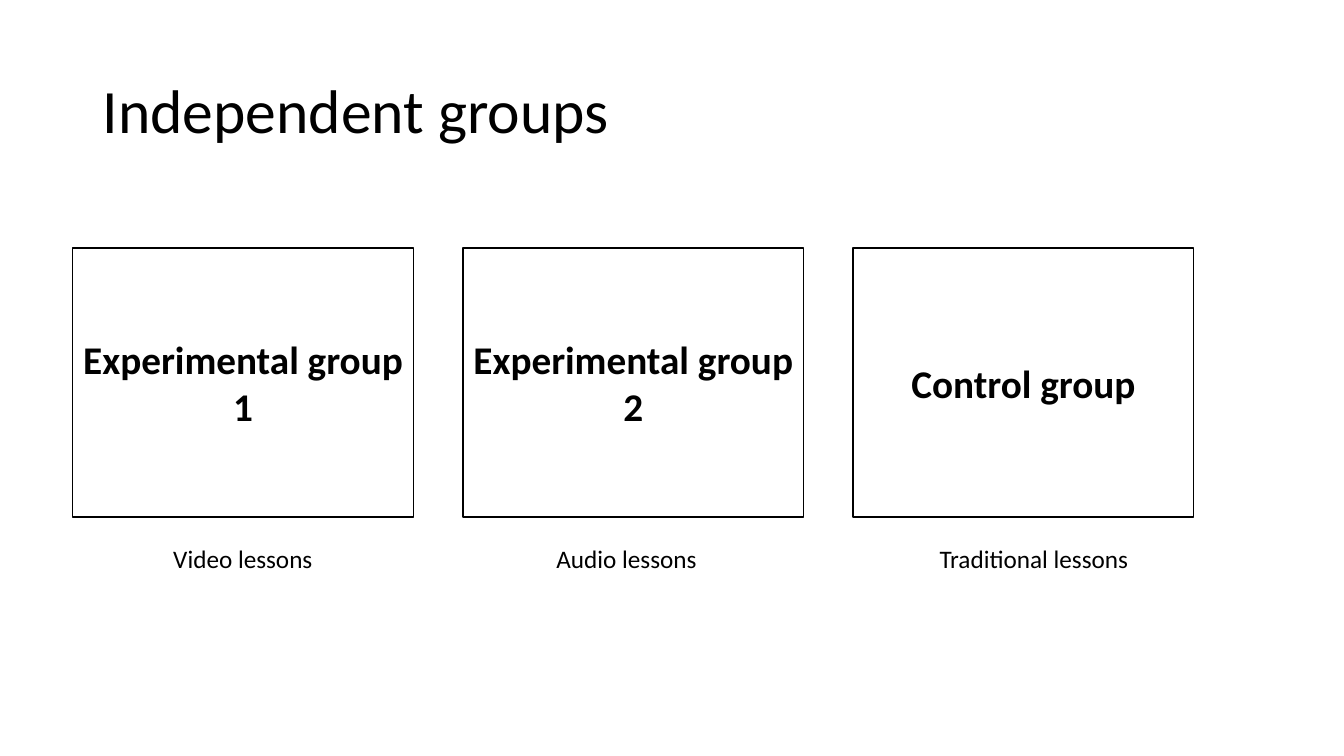
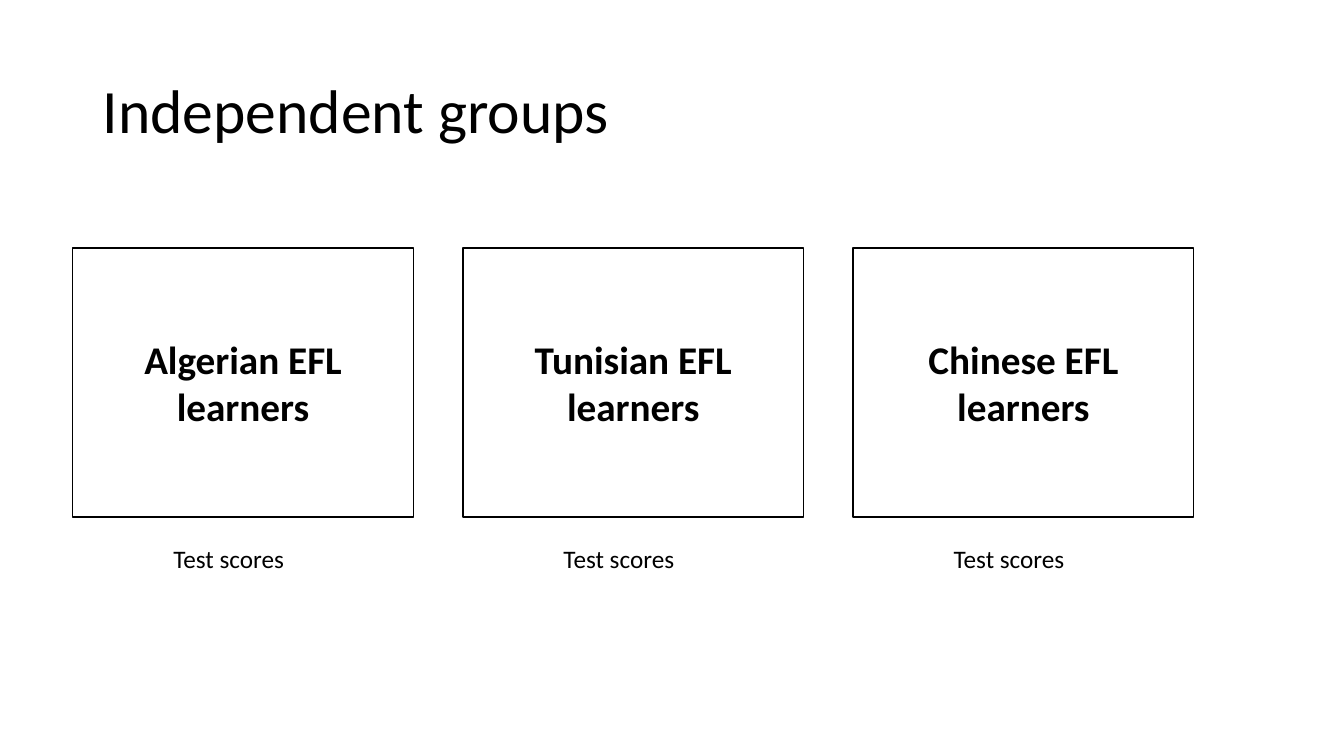
from dataclasses import dataclass

from pptx import Presentation
from pptx.dml.color import RGBColor
from pptx.enum.shapes import MSO_SHAPE
from pptx.enum.text import MSO_ANCHOR, MSO_AUTO_SIZE, PP_ALIGN
from pptx.util import Inches, Pt


@dataclass(frozen=True)
class Theme:
    font: str = "Calibri"
    ink: RGBColor = RGBColor(0, 0, 0)
    paper: RGBColor = RGBColor(255, 255, 255)
    title: Pt = Pt(44)
    group: Pt = Pt(28)
    caption: Pt = Pt(18)
    line: Pt = Pt(1)


THEME = Theme()
TITLE = "Independent groups"
GROUP_LEFT, GROUP_PITCH = 0.72, 3.87
CAPTION_LEFT = 1.62

SLIDES = [
    {
        "groups": ["Experimental group 1", "Experimental group 2", "Control group"],
        "captions": [("Video lessons", 1.74), ("Audio lessons", 1.74), ("Traditional lessons", 2.24)],
        "caption_pitch": 3.8,
    },
    {
        "groups": ["Algerian EFL learners", "Tunisian EFL learners", "Chinese EFL learners"],
        "captions": [("Test scores", 1.58)] * 3,
        "caption_pitch": GROUP_PITCH,
    },
]


def write(sp, text, size, bold=False, frame=None, para=None):
    tf = sp.text_frame
    p = tf.paragraphs[0]
    r = p.add_run()
    r.text = text
    formats = [
        (tf, {"word_wrap": True, **(frame or {})}),
        (p, para or {}),
        (r.font, {"name": THEME.font, "size": size, "bold": bold}),
    ]
    for target, values in formats:
        for name, value in values.items():
            setattr(target, name, value)
    r.font.color.rgb = THEME.ink


prs = Presentation()
prs.slide_width = Inches(13.33)
prs.slide_height = Inches(7.5)

for content in SLIDES:
    s = prs.slides.add_slide(prs.slide_layouts[6])
    s.background.fill.solid()
    s.background.fill.fore_color.rgb = THEME.paper

    sp = s.shapes.add_textbox(Inches(0.92), Inches(0.4), Inches(11.5), Inches(1.45))
    write(sp, TITLE, THEME.title,
          frame={"vertical_anchor": MSO_ANCHOR.MIDDLE}, para={"line_spacing": 0.9})

    for i, group in enumerate(content["groups"]):
        sp = s.shapes.add_shape(MSO_SHAPE.RECTANGLE, Inches(GROUP_LEFT + i * GROUP_PITCH),
                                Inches(2.46), Inches(3.38), Inches(2.67))
        sp.shadow.inherit = False
        sp.fill.background()
        sp.line.color.rgb = THEME.ink
        sp.line.width = THEME.line
        write(sp, group, THEME.group, bold=True,
              frame={"vertical_anchor": MSO_ANCHOR.MIDDLE}, para={"alignment": PP_ALIGN.CENTER})

    for i, (caption, width) in enumerate(content["captions"]):
        sp = s.shapes.add_textbox(Inches(CAPTION_LEFT + i * content["caption_pitch"]),
                                  Inches(5.34), Inches(width), Inches(0.4))
        write(sp, caption, THEME.caption,
              frame={"auto_size": MSO_AUTO_SIZE.SHAPE_TO_FIT_TEXT})

prs.save("out.pptx")
